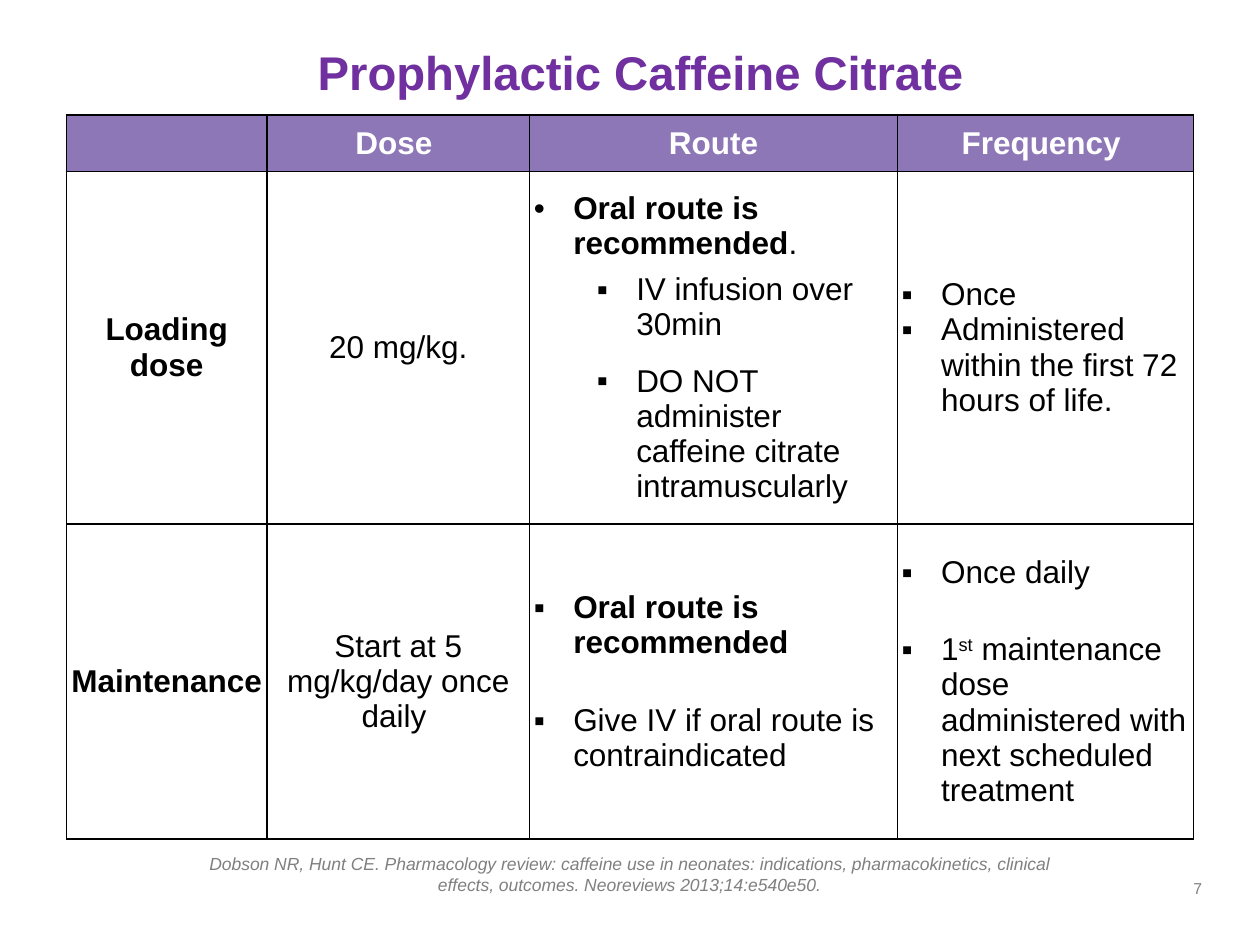
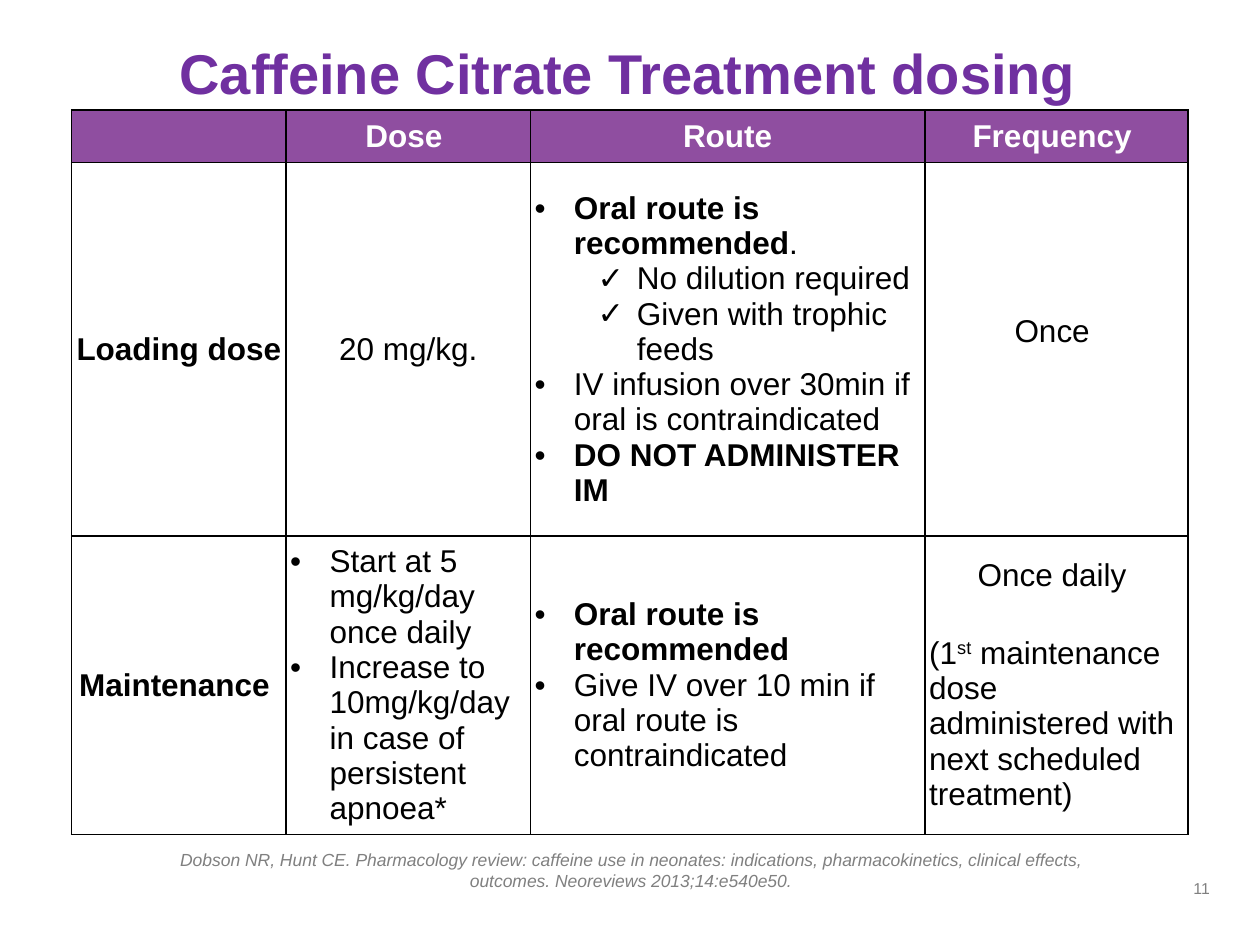
from dataclasses import dataclass

from lxml.etree import SubElement
from pptx import Presentation
from pptx.dml.color import RGBColor
from pptx.enum.text import MSO_ANCHOR, MSO_AUTO_SIZE, PP_ALIGN
from pptx.oxml.ns import qn
from pptx.util import Pt

# Shared look
FONT = "Arial"
PURPLE, BLACK, WHITE, GREY = "7030A0", "000000", "FFFFFF", "808080"
BODY_SIZE = 18
HANGING, LEVEL_STEP = 22.5, 36
CELL_MARGIN = 2.4
CITATION = (
    "Dobson NR, Hunt CE. Pharmacology review: caffeine use in neonates: "
    "indications, pharmacokinetics, clinical effects, outcomes. "
    "Neoreviews 2013;14:e540e50."
)
HEADINGS = ["", "Dose ", "Route", "Frequency "]


@dataclass
class Line:
    """One paragraph; pieces after the text are (text, style) runs."""
    text: str
    bullet: str = ""
    level: int = 0
    before: float = 0
    bold: bool = False
    centered: bool = False
    pieces: tuple = ()


def centered(text, bold=False):
    return [Line(text, bold=bold, centered=True)]


def color(hex_string):
    return RGBColor.from_string(hex_string)


def format_font(font, size, hex_string, bold=False, italic=False):
    font.name = FONT
    font.size = Pt(size)
    font.bold = bold
    font.italic = italic
    font.color.rgb = color(hex_string)


def add_bullet(paragraph, character, level):
    properties = paragraph._p.get_or_add_pPr()
    properties.set("marL", str(Pt(HANGING + level * LEVEL_STEP)))
    properties.set("indent", str(-Pt(HANGING)))
    bullet_color = SubElement(properties, qn("a:buClr"))
    SubElement(bullet_color, qn("a:srgbClr"), val=BLACK)
    SubElement(properties, qn("a:buFont"), typeface=FONT)
    SubElement(properties, qn("a:buChar"), char=character)


def write_line(paragraph, line, hex_string):
    paragraph.alignment = PP_ALIGN.CENTER if line.centered else PP_ALIGN.LEFT
    if line.before:
        paragraph.space_before = Pt(line.before)
    if line.bullet:
        paragraph.level = line.level
        add_bullet(paragraph, line.bullet, line.level)
    format_font(paragraph.font, BODY_SIZE, hex_string, line.bold)
    paragraph.add_run().text = line.text
    for text, style in line.pieces:
        run = paragraph.add_run()
        run.text = text
        if style == "superscript":
            run.font._element.set("baseline", "30000")
        elif style == "regular":
            run.font.bold = False


def add_borders(cell):
    properties = cell._tc.get_or_add_tcPr()
    for side in ("a:lnL", "a:lnR", "a:lnT", "a:lnB"):
        border = SubElement(properties, qn(side), w=str(Pt(1)))
        fill = SubElement(border, qn("a:solidFill"))
        SubElement(fill, qn("a:srgbClr"), val=BLACK)


def fill_cell(cell, lines, hex_string=BLACK, background=None):
    cell.vertical_anchor = MSO_ANCHOR.MIDDLE
    cell.margin_left = cell.margin_right = Pt(CELL_MARGIN)
    cell.margin_top = cell.margin_bottom = 0
    add_borders(cell)
    if background:
        cell.fill.solid()
        cell.fill.fore_color.rgb = color(background)
    else:
        cell.fill.background()
    frame = cell.text_frame
    for index, line in enumerate(lines):
        paragraph = frame.add_paragraph() if index else frame.paragraphs[0]
        write_line(paragraph, line, hex_string)


def add_dosing_table(slide, left, top, widths, heights, header_fill, rows):
    table = slide.shapes.add_table(
        len(heights), len(widths), Pt(left), Pt(top),
        Pt(sum(widths)), Pt(sum(heights))).table
    table.first_row = table.horz_banding = False
    for column, width in zip(table.columns, widths):
        column.width = Pt(width)
    for row, height in zip(table.rows, heights):
        row.height = Pt(height)
    for index, heading in enumerate(HEADINGS):
        lines = centered(heading, bold=True) if heading else []
        fill_cell(table.cell(0, index), lines, WHITE, header_fill)
    for row_index, row in enumerate(rows, start=1):
        for column_index, lines in enumerate(row):
            fill_cell(table.cell(row_index, column_index), lines)
    return table


def add_title(slide, text, size, left, top, width, height):
    title = slide.shapes.title
    title.left, title.top = Pt(left), Pt(top)
    title.width, title.height = Pt(width), Pt(height)
    frame = title.text_frame
    frame.text = text
    frame.auto_size = MSO_AUTO_SIZE.NONE
    frame.vertical_anchor = MSO_ANCHOR.MIDDLE
    paragraph = frame.paragraphs[0]
    paragraph.alignment = PP_ALIGN.CENTER
    paragraph.line_spacing = 0.9
    format_font(paragraph.font, size, PURPLE, bold=True)


def add_text(slide, text, size, left, top, width, height, italic=False):
    frame = slide.shapes.add_textbox(
        Pt(left), Pt(top), Pt(width), Pt(height)).text_frame
    frame.word_wrap = True
    frame.text = text
    format_font(frame.paragraphs[0].font, size, GREY, italic=italic)
    return frame


def add_footer(slide, number, left, top, width):
    citation = add_text(slide, CITATION, 10, left, top, width, 31.7, italic=True)
    citation.paragraphs[0].alignment = PP_ALIGN.CENTER
    page = add_text(slide, number, 9, 677, 493.9, 49.7, 27.4)
    page.vertical_anchor = MSO_ANCHOR.MIDDLE
    page.margin_left = page.margin_right = Pt(5)
    page.margin_top = page.margin_bottom = Pt(2.9)


def add_prophylactic_slide(presentation):
    slide = presentation.slides.add_slide(presentation.slide_layouts[5])
    add_title(slide, "Prophylactic Caffeine Citrate", 27, 134.6, 24.5, 463, 36.7)
    loading = [
        centered("Loading dose", bold=True),
        centered("20 mg/kg."),
        [Line("Oral route is recommended", "•", bold=True,
              pieces=((".", "regular"),)),
         Line("IV infusion over 30min", "▪", level=1, before=6),
         Line("DO NOT administer caffeine citrate intramuscularly", "▪",
              level=1, before=12)],
        [Line("Once", "▪"),
         Line("Administered within the first 72 hours of life.", "▪")],
    ]
    maintenance = [
        centered("Maintenance ", bold=True),
        centered("Start at 5 mg/kg/day once daily "),
        [Line("Oral route is recommended", "▪", bold=True),
         Line("Give IV if oral route is contraindicated", "▪", before=24)],
        [Line("Once daily", "▪"),
         Line("1", "▪", before=24, pieces=(
             ("st", "superscript"),
             (" maintenance dose administered with next scheduled treatment", "")))],
    ]
    add_dosing_table(slide, 38, 65.7, [114.5, 150.2, 210.2, 169.2],
                     [32.2, 201.6, 180], "8D77B6", [loading, maintenance])
    add_footer(slide, "7", 101.5, 483.8, 516.2)


def add_treatment_slide(presentation):
    slide = presentation.slides.add_slide(presentation.slide_layouts[5])
    add_title(slide, "Caffeine Citrate Treatment dosing", 32, 81.4, 26.6, 555, 33.8)
    loading = [
        centered("Loading dose", bold=True),
        centered("20 mg/kg."),
        [Line("Oral route is recommended", "•", bold=True,
              pieces=((".", "regular"),)),
         Line("No dilution required", "✓", level=1),
         Line("Given with trophic feeds", "✓", level=1),
         Line("IV infusion over 30min if oral is contraindicated", "•"),
         Line("DO NOT ADMINISTER IM", "•", bold=True)],
        centered("Once "),
    ]
    maintenance = [
        centered("Maintenance ", bold=True),
        [Line("Start at 5 mg/kg/day once daily", "•"),
         Line("Increase to 10mg/kg/day in case of persistent apnoea*", "•")],
        [Line("Oral route is recommended", "•", bold=True),
         Line("Give IV over 10 min if oral route is contraindicated", "•")],
        [Line("Once daily ", centered=True),
         Line("(1", before=24, pieces=(
             ("st", "superscript"),
             (" maintenance dose administered with next scheduled treatment)", "")))],
    ]
    table = add_dosing_table(slide, 41, 62.8, [122.5, 139.6, 225.5, 150.4],
                             [30.2, 213.3, 170.6], "8F4EA0",
                             [loading, maintenance])
    # The loading frequency sits a little above the middle of its cell
    table.cell(1, 3).margin_bottom = Pt(20)
    add_footer(slide, "11", 78.5, 481.7, 563.8)


def main():
    presentation = Presentation()
    presentation.slide_width, presentation.slide_height = Pt(720), Pt(540)
    add_prophylactic_slide(presentation)
    add_treatment_slide(presentation)
    presentation.save("out.pptx")


if __name__ == "__main__":
    main()
